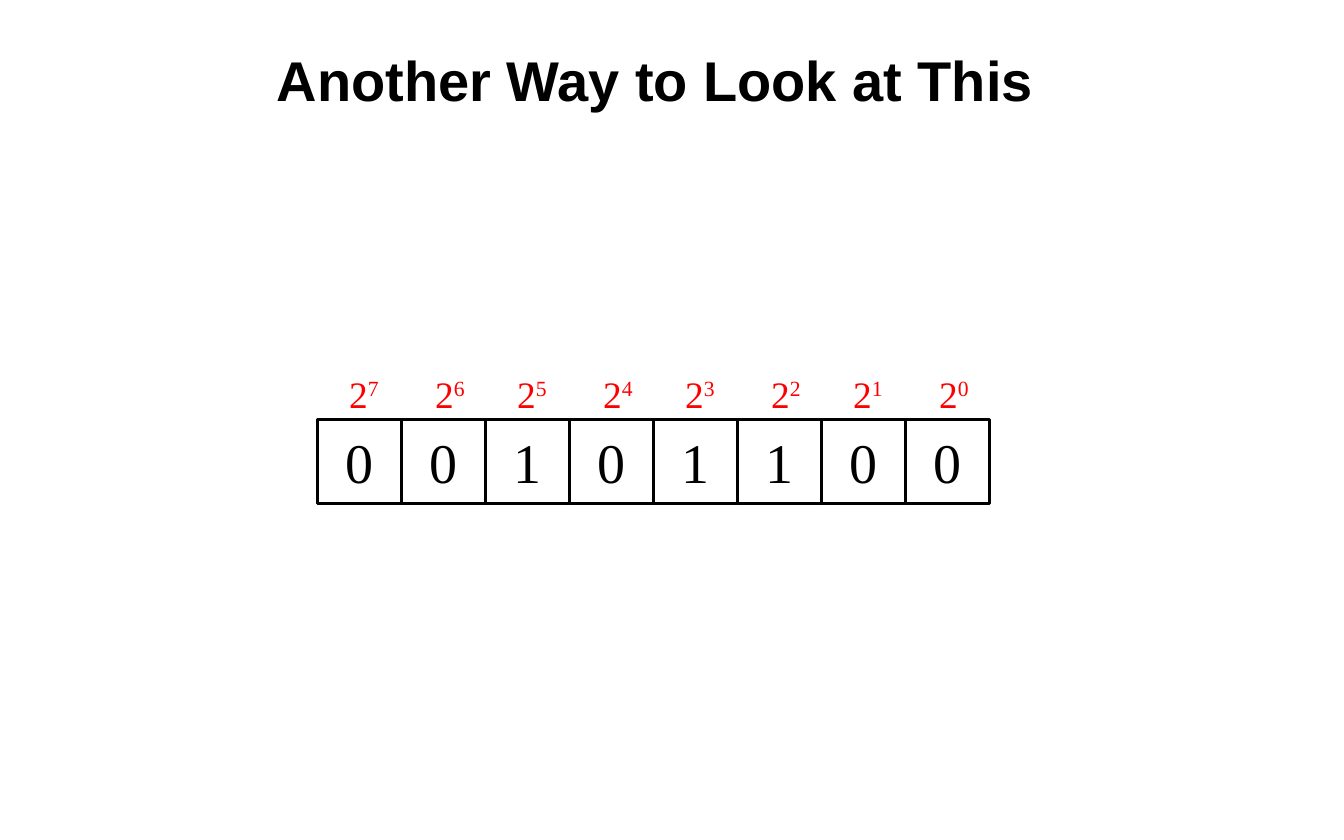
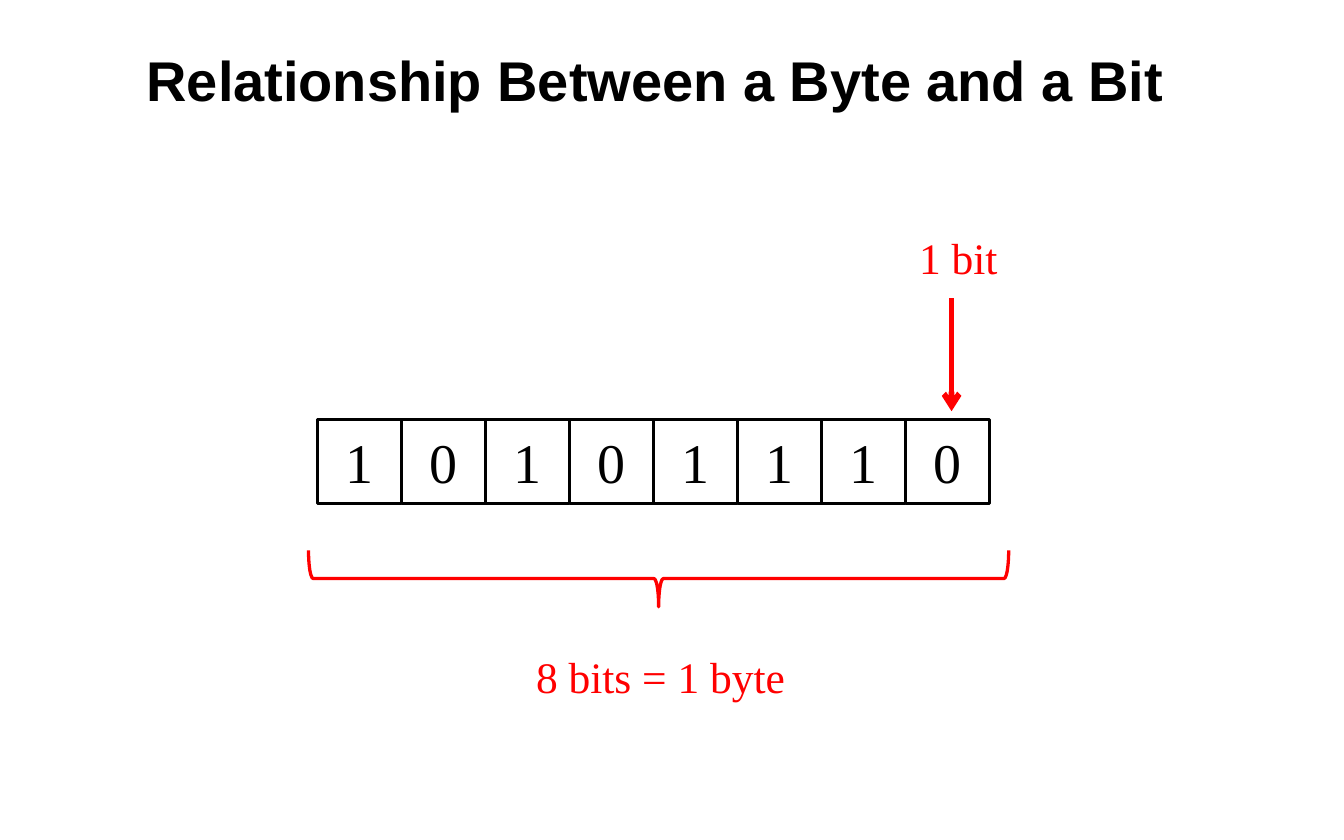
from dataclasses import dataclass

from lxml import etree
from pptx import Presentation
from pptx.dml.color import RGBColor
from pptx.enum.shapes import MSO_CONNECTOR, MSO_SHAPE
from pptx.enum.text import MSO_ANCHOR, PP_ALIGN
from pptx.oxml.ns import qn
from pptx.util import Inches, Pt

RECTANGLE, RIGHT_BRACE = MSO_SHAPE.RECTANGLE, MSO_SHAPE.RIGHT_BRACE
STRAIGHT = MSO_CONNECTOR.STRAIGHT
LEFT, CENTER = PP_ALIGN.LEFT, PP_ALIGN.CENTER
TOP, MIDDLE = MSO_ANCHOR.TOP, MSO_ANCHOR.MIDDLE


@dataclass(frozen=True)
class Theme:
    ink: RGBColor = RGBColor(0, 0, 0)
    accent: RGBColor = RGBColor(255, 0, 0)
    title_font: str = "Arial"
    body_font: str = "Times New Roman"
    title_size: float = 30
    digit_size: float = 30
    power_size: float = 20
    caption_size: float = 23.3


theme = Theme()
CELL = 0.625
ROW_LEFT, ROW_TOP = 2.36, 3.12


def write(shape, runs, size, color, font=theme.body_font, align=LEFT,
          anchor=TOP, wrap=False, bold=False):
    frame = shape.text_frame
    frame.word_wrap = wrap
    frame.vertical_anchor = anchor
    paragraph = frame.paragraphs[0]
    paragraph.alignment = align
    for text in runs:
        run = paragraph.add_run()
        run.text = text
        run.font.name = font
        run.font.size = Pt(size)
        run.font.bold = bold
        run.font.color.rgb = color
    return paragraph


def add_byte_slide(deck, heading, bits):
    slide = deck.slides.add_slide(deck.slide_layouts[6])
    title = slide.shapes.add_textbox(Inches(0), Inches(0.28), Inches(9.75), Inches(0.62))
    write(title, [heading], theme.title_size, theme.ink, theme.title_font,
          CENTER, MIDDLE, wrap=True, bold=True)
    for column, bit in enumerate(bits):
        cell = slide.shapes.add_shape(
            RECTANGLE, Inches(ROW_LEFT + column * CELL), Inches(ROW_TOP),
            Inches(CELL), Inches(CELL))
        cell.shadow.inherit = False
        cell.fill.background()
        cell.line.color.rgb = theme.ink
        cell.line.width = Pt(1.5)
        write(cell, [bit], theme.digit_size, theme.ink, align=CENTER, anchor=MIDDLE)
    return slide


deck = Presentation()
deck.slide_width = Inches(10)
deck.slide_height = Inches(6.25)

powers_slide = add_byte_slide(deck, "Another Way to Look at This", "00101100")
for column in range(8):
    pair, second = divmod(column, 2)
    power = powers_slide.shapes.add_textbox(
        Inches(2.5 + pair * 2 * CELL + second * 0.64), Inches(2.71),
        Inches(0.44), Inches(0.44))
    paragraph = write(power, ["2", str(7 - column)], theme.power_size, theme.accent)
    exponent = paragraph.runs[1]
    exponent._r.get_or_add_rPr().set("baseline", "30000")

byte_slide = add_byte_slide(deck, "Relationship Between a Byte and a Bit", "10101110")

brace = byte_slide.shapes.add_shape(
    RIGHT_BRACE, Inches(4.69), Inches(1.7), Inches(0.42), Inches(5.21))
brace.rotation = 90
brace.adjustments[0] = 0.083
brace.adjustments[1] = 0.5
brace.shadow.inherit = False
brace.fill.background()
brace.line.color.rgb = theme.accent
brace.line.width = Pt(1.75)

bit_arrow = byte_slide.shapes.add_connector(
    STRAIGHT, Inches(7.08), Inches(2.22), Inches(7.08), Inches(3.06))
bit_arrow.line.color.rgb = theme.accent
bit_arrow.line.width = Pt(3)
etree.SubElement(bit_arrow.line._get_or_add_ln(), qn("a:tailEnd"), type="arrow")
etree.SubElement(bit_arrow._element.spPr, qn("a:effectLst"))

for caption, left, top, width in [
    ("8 bits = 1 byte", 3.89, 4.79, 2.08),
    ("1 bit", 6.74, 1.67, 0.79),
]:
    label = byte_slide.shapes.add_textbox(
        Inches(left), Inches(top), Inches(width), Inches(0.49))
    write(label, [caption], theme.caption_size, theme.accent)

deck.save("out.pptx")
